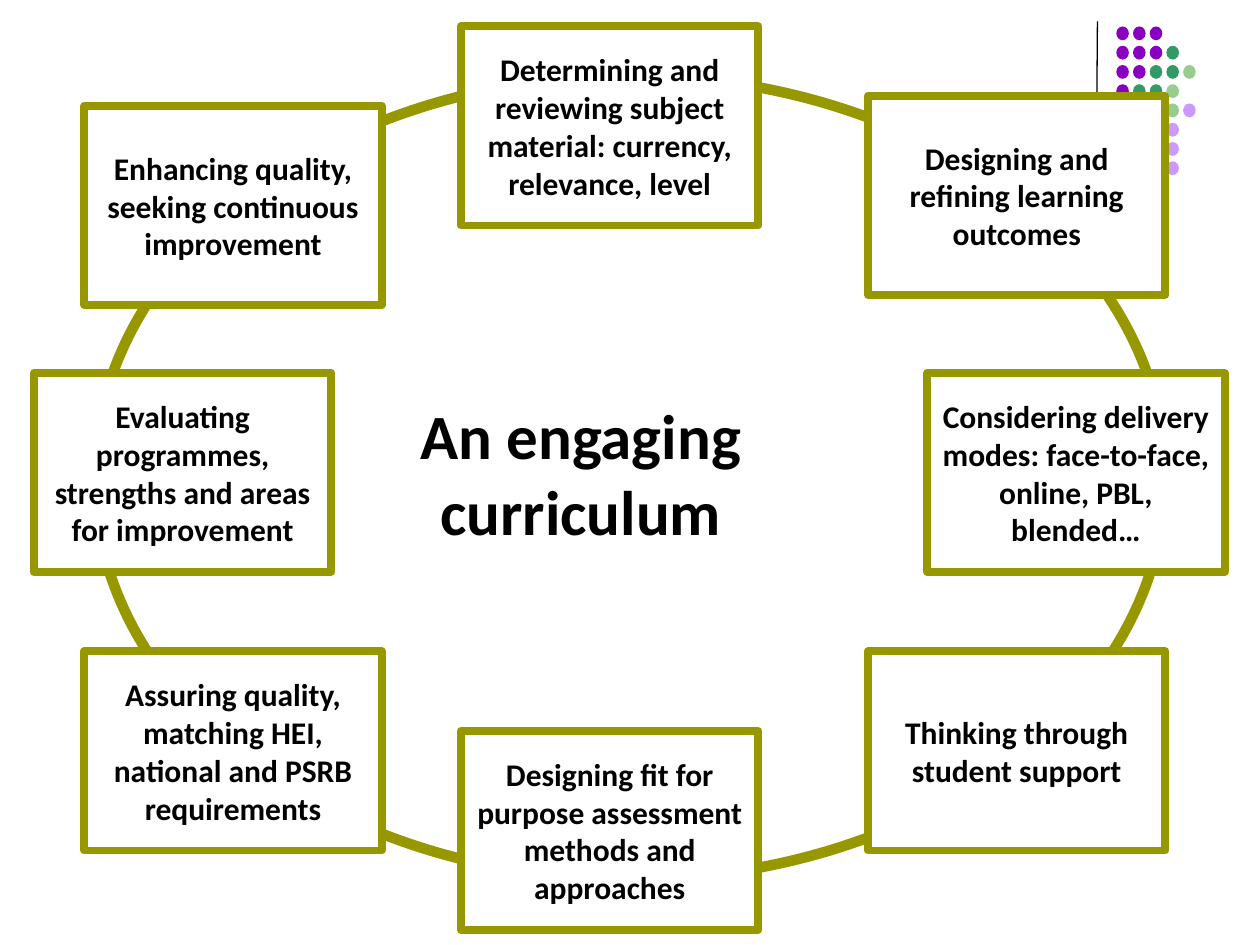
from lxml import etree
from pptx import Presentation
from pptx.dml.color import RGBColor
from pptx.enum.shapes import MSO_CONNECTOR, MSO_SHAPE
from pptx.enum.text import MSO_ANCHOR, MSO_AUTO_SIZE, PP_ALIGN
from pptx.oxml.ns import qn
from pptx.util import Pt

RECT, OVAL = MSO_SHAPE.RECTANGLE, MSO_SHAPE.OVAL
LINE = MSO_CONNECTOR.STRAIGHT
MIDDLE, CENTER = MSO_ANCHOR.MIDDLE, PP_ALIGN.CENTER
FIXED = MSO_AUTO_SIZE.NONE

PX = 9144
FONT = "Calibri"
COLORS = {
    "olive": "979700",
    "white": "FFFFFF",
    "black": "000000",
    "P": "8A00C0",
    "G": "339966",
    "L": "99CC91",
    "V": "CC99FF",
}
DOTS = ["PPP", "PPPG", "PPGGL", "PGGL", "   LV", "   V", "   V", "   V"]
CARD = (236, 158)
STEPS = [
    (27, 296, "Evaluating programmes, strengths and areas for improvement"),
    (736, 296, "Considering delivery modes: face-to-face, online, PBL, blended…"),
    (366, 21, "Determining and reviewing subject material: currency, relevance, level"),
    (366, 580, "Designing fit for purpose assessment methods and approaches"),
    (67, 84, "Enhancing quality, seeking continuous improvement"),
    (689, 76, "Designing and refining learning outcomes"),
    (67, 517, "Assuring quality, matching HEI, national and PSRB requirements"),
    (689, 517, "Thinking through student support"),
]


def emu(*vals):
    return [round(v * PX) for v in vals]


def color(name):
    return RGBColor.from_string(COLORS[name])


def paint(shape, fill, edge=None, width=0):
    shape.fill.solid()
    shape.fill.fore_color.rgb = color(fill)
    if edge:
        shape.line.color.rgb = color(edge)
        shape.line.width = Pt(width)
    else:
        shape.line.fill.background()


def add_shape(shapes, kind, box, fill, edge=None, width=0):
    shape = shapes.add_shape(kind, *emu(*box))
    shape.shadow.inherit = False
    paint(shape, fill, edge, width)
    return shape


def write(shape, text, size):
    frame = shape.text_frame
    frame.text = text
    frame.word_wrap = True
    frame.auto_size = FIXED
    frame.vertical_anchor = MIDDLE
    para = frame.paragraphs[0]
    para.alignment = CENTER
    para.font.name = FONT
    para.font.size = Pt(size)
    para.font.bold = True
    para.font.color.rgb = color("black")


def add_rule(slide, box):
    left, top, width, height = box
    rule = slide.shapes.add_connector(
        LINE, *emu(left + width, top, left, top + height))
    rule.line.color.rgb = color("black")
    rule.line.width = Pt(0.75)
    etree.SubElement(rule._element.spPr, qn("a:effectLst"))


def add_dots(slide, box):
    left, top, width, height = box
    wide, high = 10, 11
    across = (width - wide) / (max(map(len, DOTS)) - 1)
    down = (height - high) / (len(DOTS) - 1)
    group = slide.shapes.add_group_shape()
    for row, line in enumerate(DOTS):
        for col, tone in enumerate(line):
            if tone != " ":
                spot = (left + col * across, top + row * down, wide, high)
                add_shape(group.shapes, OVAL, spot, tone)


def add_cycle(slide, box):
    add_shape(slide.shapes, OVAL, box, "white", "olive", 6)
    for left, top, text in STEPS:
        card = add_shape(slide.shapes, RECT, (left, top, *CARD),
                         "white", "olive", 4.5)
        write(card, text, 18)


def add_title(slide, box):
    title = slide.shapes.title
    title.left, title.top, title.width, title.height = emu(*box)
    paint(title, "white", "white", 4.5)
    write(title, "An engaging curriculum", 36)
    slide.shapes._spTree.append(title._element)


def main():
    deck = Presentation()
    deck.slide_width, deck.slide_height = emu(1000, 750)
    slide = deck.slides.add_slide(deck.slide_layouts[5])
    add_rule(slide, (870, 17, 1, 130))
    add_dots(slide, (886, 21, 63, 118))
    add_cycle(slide, (75, 60, 850, 638))
    add_title(slide, (320, 296, 282, 158))
    deck.save("out.pptx")


if __name__ == "__main__":
    main()
